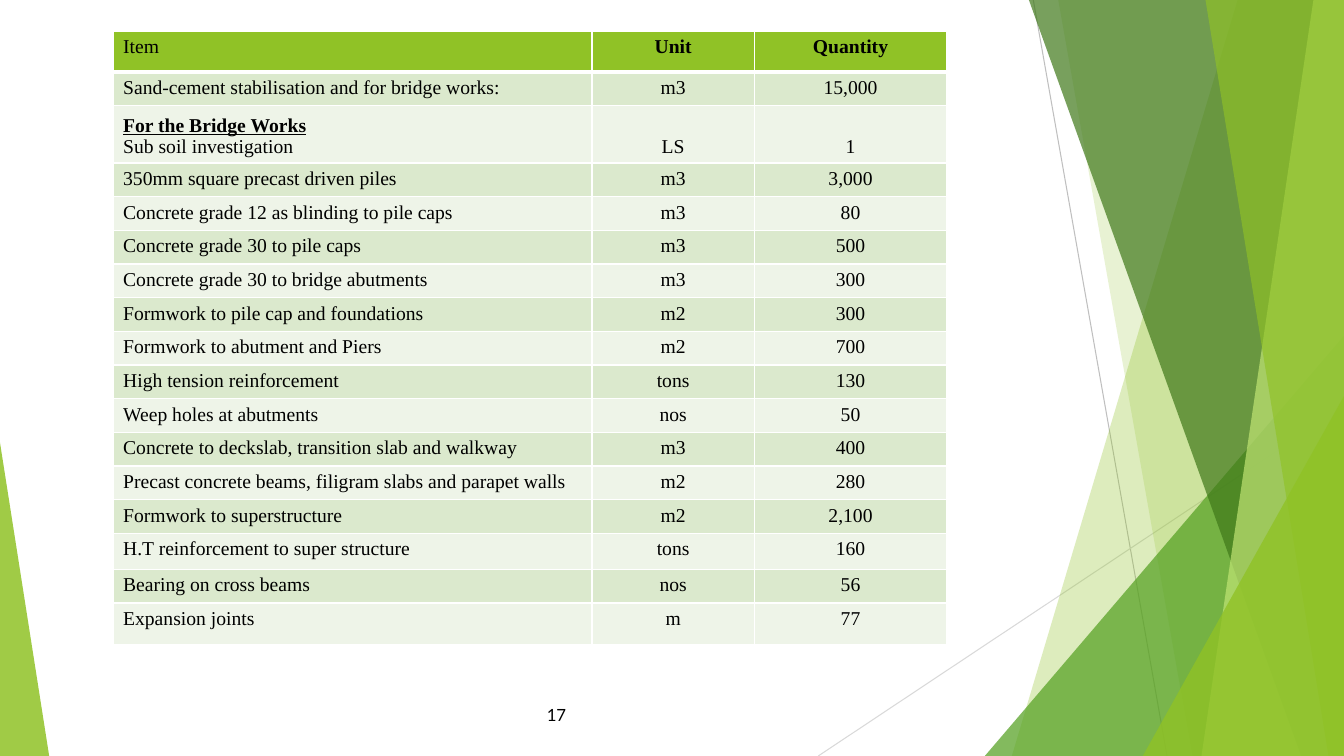
from dataclasses import dataclass

from lxml import etree
from pptx import Presentation
from pptx import util as u
from pptx.dml.color import RGBColor
from pptx.enum import shapes, text
from pptx.oxml import ns

Cm = u.Cm
SLIDE_WIDTH, SLIDE_HEIGHT = 33.87, 19.05


@dataclass(frozen=True)
class Theme:
    lime: str = "90C226"
    pale_lime: str = "C0E474"
    green: str = "54A021"
    forest: str = "3F7819"
    odd_row: str = "DBE9CD"
    even_row: str = "EEF4E8"
    border: str = "FFFFFF"
    ink: str = "000000"
    dark_rule: str = "BFBFBF"
    light_rule: str = "D9D9D9"
    table_font: str = "Times New Roman"
    number_font: str = "Lato"
    table_size: int = 14
    number_size: int = 12


THEME = Theme()
CENTER, LEFT, RIGHT = text.PP_ALIGN.CENTER, text.PP_ALIGN.LEFT, text.PP_ALIGN.RIGHT

SECTION_HEADING = "For the Bridge Works"
COLUMN_WIDTHS = [12.07, 4.09, 4.85]
HEADER_HEIGHT = 1.04
# item, unit, quantity, row height in cm
QUANTITIES = [
    ("Sand-cement stabilisation and for bridge works:", "m3", "15,000", 0.8),
    ("Sub soil investigation", "LS", "1", 1.36),
    ("350mm square precast driven piles", "m3", "3,000", 0.8),
    ("Concrete grade 12 as blinding to pile caps", "m3", "80", 0.8),
    ("Concrete grade 30 to pile caps", "m3", "500", 0.8),
    ("Concrete grade 30 to bridge abutments", "m3", "300", 0.8),
    ("Formwork to pile cap and foundations", "m2", "300", 0.8),
    ("Formwork to abutment and Piers", "m2", "700", 0.8),
    ("High tension reinforcement", "tons", "130", 0.8),
    ("Weep holes at abutments", "nos", "50", 0.8),
    ("Concrete to deckslab, transition slab and walkway", "m3", "400", 0.83),
    ("Precast concrete beams, filigram slabs and parapet walls", "m2", "280", 0.81),
    ("Formwork to superstructure", "m2", "2,100", 0.8),
    ("H.T reinforcement to super structure", "tons", "160", 0.91),
    ("Bearing on cross beams", "nos", "56", 0.84),
    ("Expansion joints", "m", "77", 1.04),
]


def write(paragraph, words, font=THEME.table_font, size=THEME.table_size,
          align=LEFT, bold=False, underline=False):
    paragraph.alignment = align
    run = paragraph.add_run()
    run.text = words
    run.font.name = font
    run.font.size = u.Pt(size)
    run.font.bold = bold
    run.font.underline = underline
    run.font.color.rgb = RGBColor.from_string(THEME.ink)


def paint(shape, color, opacity):
    """Fill a shape with a see-through colour, without outline or shadow."""
    shape.shadow.inherit = False
    shape.line.fill.background()
    shape.fill.solid()
    shape.fill.fore_color.rgb = RGBColor.from_string(color)
    solid_color = shape.fill._xPr.find(".//" + ns.qn("a:srgbClr"))
    etree.SubElement(solid_color, ns.qn("a:alpha"), val=str(opacity * 1000))


def add_rule(slide, start, end, color):
    rule = slide.shapes.add_connector(
        shapes.MSO_CONNECTOR.STRAIGHT, *map(Cm, start + end))
    rule.line.color.rgb = RGBColor.from_string(color)
    rule.line.width = u.Pt(0.75)
    etree.SubElement(rule._element.spPr, ns.qn("a:effectLst"))


def add_band(slide, top_left, bottom_right, bottom_left, color, opacity):
    """Add a full-height band whose top reaches the right slide edge."""
    outline = slide.shapes.build_freeform(Cm(top_left), 0, scale=1.0)
    outline.add_line_segments([
        (Cm(SLIDE_WIDTH), 0),
        (Cm(bottom_right), Cm(SLIDE_HEIGHT)),
        (Cm(bottom_left), Cm(SLIDE_HEIGHT)),
    ], close=True)
    paint(outline.convert_to_shape(), color, opacity)


def add_corner(slide, left, top, width, apex, color, opacity):
    """Add a triangle standing on the bottom slide edge."""
    corner = slide.shapes.add_shape(
        shapes.MSO_SHAPE.ISOSCELES_TRIANGLE,
        Cm(left), Cm(top), Cm(width), Cm(SLIDE_HEIGHT - top))
    corner.adjustments[0] = apex
    paint(corner, color, opacity)


def add_backdrop(slide):
    add_rule(slide, (26.04, 0), (29.41, SLIDE_HEIGHT), THEME.dark_rule)
    add_rule(slide, (SLIDE_WIDTH, 10.24), (20.62, SLIDE_HEIGHT), THEME.light_rule)
    add_band(slide, 31.19, SLIDE_WIDTH, 25.5, THEME.lime, 30)
    add_band(slide, 26.67, SLIDE_WIDTH, 30.05, THEME.lime, 20)
    add_corner(slide, 24.82, 8.46, 9.05, 1, THEME.green, 72)
    add_band(slide, 25.93, SLIDE_WIDTH, 32.79, THEME.forest, 70)
    add_band(slide, 33.1, SLIDE_WIDTH, 30.28, THEME.pale_lime, 70)
    add_band(slide, 30.38, SLIDE_WIDTH, 33.48, THEME.lime, 65)
    add_corner(slide, 28.8, 9.98, 5.07, 1, THEME.lime, 80)
    add_corner(slide, 0, 11.15, 1.24, 0, THEME.lime, 85)


def style_cell(cell, fill, top=1, bottom=1):
    """Set fill and border widths (points) of a cell."""
    cell.fill.solid()
    cell.fill.fore_color.rgb = RGBColor.from_string(fill)
    properties = cell._tc.get_or_add_tcPr()
    sides = [("a:lnL", 1), ("a:lnR", 1), ("a:lnT", top), ("a:lnB", bottom)]
    for position, (side, points) in enumerate(sides):
        edge = etree.Element(ns.qn(side), w=str(u.Pt(points)))
        edge_fill = etree.SubElement(edge, ns.qn("a:solidFill"))
        etree.SubElement(edge_fill, ns.qn("a:srgbClr"), val=THEME.border)
        properties.insert(position, edge)


def add_quantities(slide):
    heights = [HEADER_HEIGHT] + [row[-1] for row in QUANTITIES]
    table = slide.shapes.add_table(
        len(heights), len(COLUMN_WIDTHS), Cm(2.85), Cm(0.78),
        Cm(sum(COLUMN_WIDTHS)), Cm(sum(heights))).table
    for column, width in zip(table.columns, COLUMN_WIDTHS):
        column.width = Cm(width)
    for row, height in zip(table.rows, heights):
        row.height = Cm(height)

    for index, label in enumerate(("Item", "Unit", "Quantity")):
        cell = table.cell(0, index)
        style_cell(cell, THEME.lime, bottom=3)
        write(cell.text_frame.paragraphs[0], label, bold=index > 0,
              align=CENTER if index else LEFT)

    for number, (*entries, _) in enumerate(QUANTITIES, start=1):
        opens_section = entries[0] == "Sub soil investigation"
        for index, entry in enumerate(entries):
            cell = table.cell(number, index)
            style_cell(cell, THEME.odd_row if number % 2 else THEME.even_row,
                       top=3 if number == 1 else 1)
            paragraph = cell.text_frame.paragraphs[0]
            if opens_section:
                cell.vertical_anchor = text.MSO_ANCHOR.BOTTOM
                if index == 0:
                    write(paragraph, SECTION_HEADING, bold=True, underline=True)
                    paragraph = cell.text_frame.add_paragraph()
            write(paragraph, entry, align=CENTER if index else LEFT)


def add_page_number(slide, number):
    frame = slide.shapes.add_textbox(Cm(12.62), Cm(17.5), Cm(1.9), Cm(1.02)).text_frame
    frame.word_wrap = True
    frame.vertical_anchor = text.MSO_ANCHOR.MIDDLE
    write(frame.paragraphs[0], number, font=THEME.number_font,
          size=THEME.number_size, align=RIGHT)


def main():
    deck = Presentation()
    deck.slide_width, deck.slide_height = Cm(SLIDE_WIDTH), Cm(SLIDE_HEIGHT)
    slide = deck.slides.add_slide(deck.slide_layouts.get_by_name("Blank"))
    add_backdrop(slide)
    add_page_number(slide, "17")
    add_quantities(slide)
    deck.save("out.pptx")


if __name__ == "__main__":
    main()
